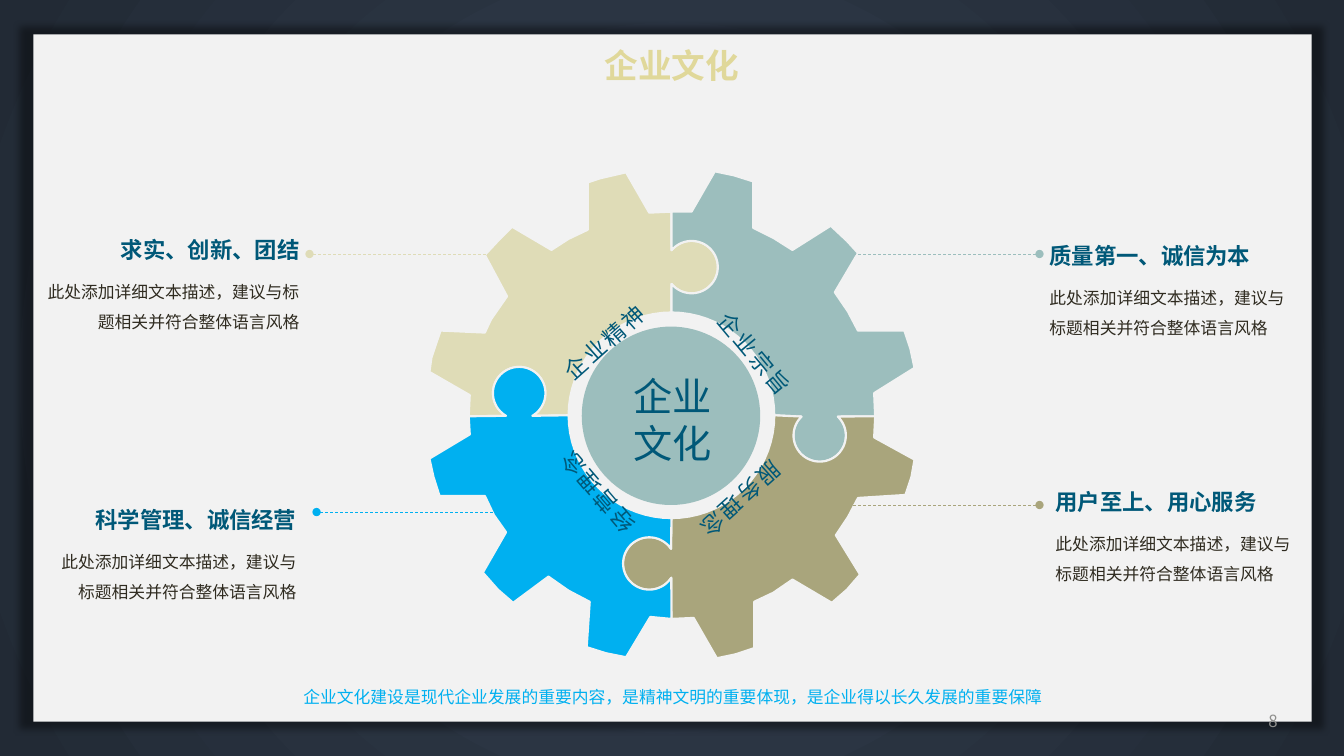
import math
from dataclasses import dataclass

from lxml import etree
from pptx import Presentation
from pptx.dml.color import RGBColor
from pptx.enum.dml import MSO_LINE
from pptx.enum.shapes import MSO_CONNECTOR, MSO_SHAPE
from pptx.enum.text import MSO_ANCHOR, MSO_AUTO_SIZE, PP_ALIGN
from pptx.oxml.ns import qn
from pptx.util import Emu, Pt

EMU_PER_PX = 9144
FONT = "Noto Sans CJK SC"
LEFT, CENTER, RIGHT = PP_ALIGN.LEFT, PP_ALIGN.CENTER, PP_ALIGN.RIGHT
TOP, MIDDLE = MSO_ANCHOR.TOP, MSO_ANCHOR.MIDDLE
DASH = MSO_LINE.DASH
STRAIGHT = MSO_CONNECTOR.STRAIGHT
RECTANGLE, OVAL = MSO_SHAPE.RECTANGLE, MSO_SHAPE.OVAL
COLORS = {
    "night": "333F50", "midnight": "222A35", "panel": "F2F2F2",
    "cream": "DFDCB7", "teal": "9CBEBD", "olive": "A9A57C", "blue": "00B0F0",
    "heading": "005878", "body": "2F2B20", "title": "E0D89A", "number": "8F8F8D",
}
DESCRIPTION = "此处添加详细文本描述，建议与标题相关并符合整体语言风格"


@dataclass
class Box:
    left: int
    top: int
    width: int
    height: int


@dataclass
class Line:
    text: str
    size: int
    color: str
    bold: bool = False
    spacing: float = 1.0
    after: int = 0
    tracking: int = 0


@dataclass
class Arc:
    center_x: int
    center_y: int
    radius: int
    start: int
    end: int

    def points(self) -> list[tuple[float, float]]:
        steps = abs(self.end - self.start) // 5
        angles = [math.radians(self.start + (self.end - self.start) * i / steps)
                  for i in range(steps + 1)]
        return [(self.center_x + self.radius * math.cos(a),
                 self.center_y + self.radius * math.sin(a)) for a in angles]


@dataclass
class Piece:
    color: str
    inner: list[Arc]
    teeth: list[tuple[int, int]]
    outer: Arc


@dataclass
class Topic:
    heading: str
    box: Box
    align: PP_ALIGN
    color: str
    line_start: int
    line_end: int
    line_y: int


@dataclass
class Label:
    text: str
    left: int
    top: int
    rotation: float


def hub(start: int, end: int) -> Arc:
    return Arc(666, 412, 102, start, end)


def top_knob(start: int, end: int) -> Arc:
    return Arc(686, 265, 26, start, end)


def right_knob(start: int, end: int) -> Arc:
    return Arc(813, 432, 26, start, end)


def bottom_knob(start: int, end: int) -> Arc:
    return Arc(644, 559, 26, start, end)


def left_knob(start: int, end: int) -> Arc:
    return Arc(515, 390, 26, start, end)


PIECES = [
    Piece("cream", [hub(270, 180), left_knob(420, 120)],
          [(465, 413), (466, 392), (426, 369), (428, 355), (437, 328), (481, 330),
           (487, 317), (503, 294), (481, 253), (494, 239), (508, 225), (547, 248),
           (564, 237), (583, 228), (583, 181), (595, 177), (621, 171), (644, 211),
           (666, 210)], top_knob(-140, 140)),
    Piece("teal", [hub(360, 270), top_knob(140, -140)],
          [(666, 210), (686, 210), (709, 170), (728, 174), (747, 180), (747, 226),
           (767, 236), (786, 248), (824, 224), (840, 239), (851, 251), (828, 290),
           (841, 309), (851, 328), (897, 328), (903, 346), (907, 365), (867, 390),
           (868, 413)], right_knob(-46, 226)),
    Piece("olive", [hub(90, 0), right_knob(226, -46)],
          [(868, 413), (867, 434), (907, 456), (904, 473), (898, 491), (851, 494),
           (841, 513), (829, 531), (853, 570), (840, 585), (825, 598), (786, 575),
           (767, 588), (748, 597), (748, 643), (730, 649), (711, 653), (688, 613),
           (666, 614)], bottom_knob(33, 326)),
    Piece("blue", [hub(180, 90), bottom_knob(326, 33)],
          [(666, 614), (645, 612), (621, 652), (601, 648), (582, 642), (585, 597),
           (564, 586), (544, 572), (509, 598), (494, 585), (479, 568), (502, 528),
           (490, 511), (481, 492), (436, 492), (430, 473), (426, 455), (466, 431),
           (465, 413)], left_knob(120, 420)),
]
TOPICS = [
    Topic("求实、创新、团结", Box(37, 216, 270, 119), RIGHT, "cream", 307, 516, 252),
    Topic("科学管理、诚信经营", Box(37, 484, 267, 119), RIGHT, "blue", 314, 507, 508),
    Topic("质量第一、诚信为本", Box(1031, 222, 258, 119), LEFT, "teal", 1031, 818, 252),
    Topic("用户至上、用心服务", Box(1037, 466, 266, 119), LEFT, "olive", 1031, 818, 501),
]
LABELS = [
    Label("企业精神", 525, 306, 318.4),
    Label("企业宗旨", 662, 316, 50.3),
    Label("服务理念", 649, 449, 138.1),
    Label("经营理念", 519, 443, 229.5),
]


def px(value: float) -> Emu:
    return Emu(round(value * EMU_PER_PX))


def rgb(name: str) -> RGBColor:
    return RGBColor.from_string(COLORS[name])


def paint_background(slide) -> None:
    fill = slide.background.fill
    fill.gradient()
    for stop, position, color in zip(fill.gradient_stops, (0, 1), ("night", "midnight")):
        stop.position = position
        stop.color.rgb = rgb(color)
    gradient = slide.element.xpath(".//a:gradFill")[0]
    gradient.remove(gradient.find(qn("a:lin")))
    circle = etree.SubElement(gradient, qn("a:path"), path="circle")
    etree.SubElement(circle, qn("a:fillToRect"), l="50000", t="50000", r="50000", b="50000")


def add_preset(slide, kind: MSO_SHAPE, box: Box, color: str):
    shape = slide.shapes.add_shape(kind, px(box.left), px(box.top), px(box.width), px(box.height))
    shape.shadow.inherit = False
    shape.fill.solid()
    shape.fill.fore_color.rgb = rgb(color)
    shape.line.fill.background()
    return shape


def add_halo(shape) -> None:
    effects = shape.element.spPr.find(qn("a:effectLst"))
    shadow = etree.SubElement(effects, qn("a:outerShdw"), blurRad="63500", sx="102000",
                              sy="102000", algn="ctr", rotWithShape="0")
    color = etree.SubElement(shadow, qn("a:srgbClr"), val="000000")
    etree.SubElement(color, qn("a:alpha"), val="40000")


def add_piece(slide, piece: Piece) -> None:
    outline = [point for arc in piece.inner for point in arc.points()]
    outline += piece.teeth + piece.outer.points()
    points = [(px(x), px(y)) for x, y in outline]
    builder = slide.shapes.build_freeform(*points[0])
    builder.add_line_segments(points[1:], close=True)
    shape = builder.convert_to_shape()
    shape.shadow.inherit = False
    shape.fill.solid()
    shape.fill.fore_color.rgb = rgb(piece.color)
    shape.line.color.rgb = rgb("panel")
    shape.line.width = Pt(1.5)


def add_leader(slide, topic: Topic) -> None:
    y = px(topic.line_y)
    connector = slide.shapes.add_connector(STRAIGHT, px(topic.line_start), y, px(topic.line_end), y)
    connector.line.color.rgb = rgb(topic.color)
    connector.line.width = Pt(0.5)
    connector.line.dash_style = DASH
    properties = connector.element.spPr
    etree.SubElement(properties.find(qn("a:ln")), qn("a:headEnd"), type="oval")
    etree.SubElement(properties, qn("a:effectLst"))


def add_text(slide, box: Box, lines: list[Line], align: PP_ALIGN = CENTER,
             anchor: MSO_ANCHOR = TOP, wrap: bool = True, rotation: float = 0) -> None:
    shape = slide.shapes.add_textbox(px(box.left), px(box.top), px(box.width), px(box.height))
    shape.rotation = rotation
    frame = shape.text_frame
    frame.word_wrap = wrap
    frame.auto_size = MSO_AUTO_SIZE.NONE
    frame.vertical_anchor = anchor
    for index, line in enumerate(lines):
        paragraph = frame.add_paragraph() if index else frame.paragraphs[0]
        paragraph.alignment = align
        paragraph.line_spacing = line.spacing
        paragraph.space_after = Pt(line.after)
        run = paragraph.add_run()
        run.text = line.text
        run.font.size = Pt(line.size)
        run.font.bold = line.bold
        run.font.color.rgb = rgb(line.color)
        run.font.name = FONT
        properties = run.font._element
        etree.SubElement(properties, qn("a:ea"), typeface=FONT)
        if line.tracking:
            properties.set("spc", str(line.tracking * 100))


def main() -> None:
    presentation = Presentation()
    presentation.slide_width, presentation.slide_height = px(1333), px(750)
    slide = presentation.slides.add_slide(presentation.slide_layouts[6])
    paint_background(slide)
    add_halo(add_preset(slide, RECTANGLE, Box(33, 34, 1268, 682), "panel"))
    add_text(slide, Box(366, 35, 601, 60), [Line("企业文化", 24, "title", bold=True)], anchor=MIDDLE)
    for piece in PIECES:
        add_piece(slide, piece)
    for topic in TOPICS:
        add_leader(slide, topic)
    add_text(slide, Box(1225, 695, 52, 40), [Line("8", 12, "number")], RIGHT, MIDDLE)
    summary = "企业文化建设是现代企业发展的重要内容，是精神文明的重要体现，是企业得以长久发展的重要保障"
    add_text(slide, Box(233, 666, 869, 37), [Line(summary, 12, "blue", spacing=1.5)])
    for label in LABELS:
        line = Line(label.text, 16, "heading", spacing=1.5, tracking=2)
        add_text(slide, Box(label.left, label.top, 160, 80), [line],
                 wrap=False, rotation=label.rotation)
    for topic in TOPICS:
        heading = Line(topic.heading, 16, "heading", bold=True, spacing=1.5, after=6)
        description = Line(DESCRIPTION, 12, "body", spacing=1.5, after=6)
        add_text(slide, topic.box, [heading, description], topic.align)
    add_preset(slide, OVAL, Box(577, 324, 177, 177), "teal")
    center = [Line(text, 28, "heading") for text in ("企业", "文化")]
    add_text(slide, Box(618, 364, 99, 104), center, anchor=MIDDLE, wrap=False)
    presentation.save("out.pptx")


if __name__ == "__main__":
    main()
